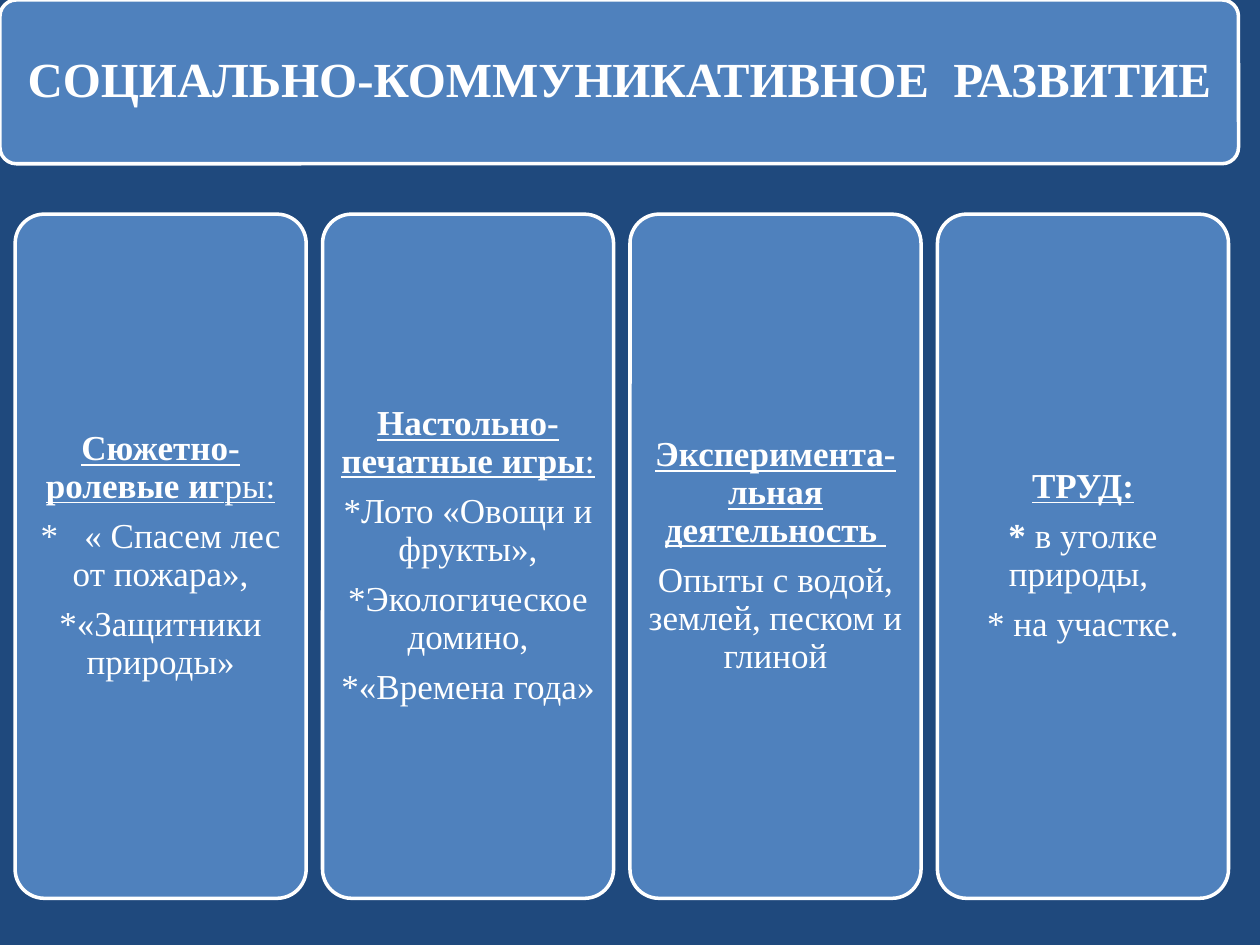
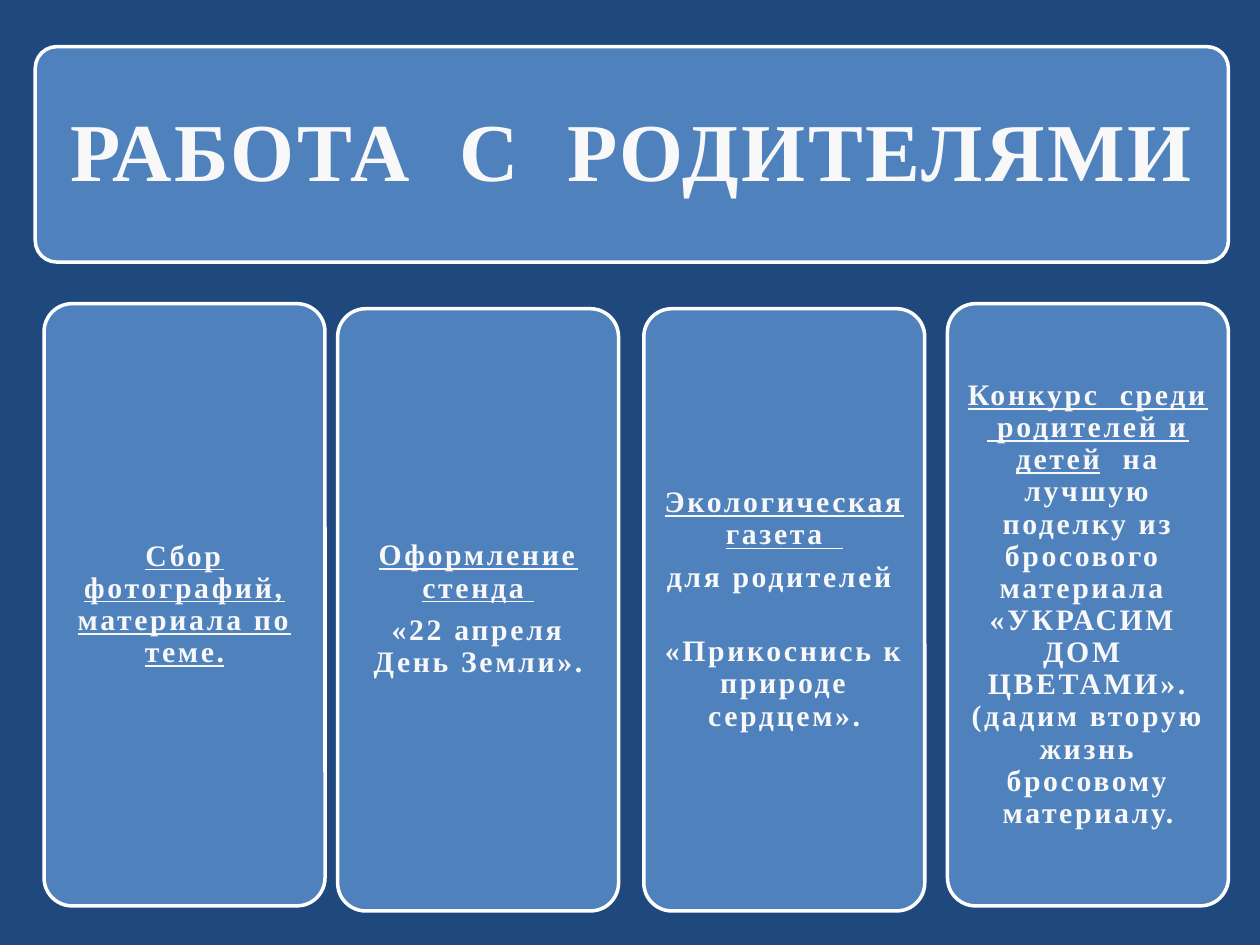
from pptx import Presentation
from pptx.dml.color import RGBColor
from pptx.enum.shapes import MSO_SHAPE
from pptx.enum.text import MSO_ANCHOR, MSO_AUTO_SIZE, PP_ALIGN
from pptx.util import Inches, Pt

NAVY = RGBColor(0x1F, 0x49, 0x7D)
BLUE = RGBColor(0x4F, 0x81, 0xBD)
WHITE = RGBColor(0xFF, 0xFF, 0xFF)
OFF_WHITE = RGBColor(0xF8, 0xF8, 0xF8)
FONT = "Times New Roman"
CORNER = 0.1
TITLE_ONLY = 5

# A card is a list of paragraphs, a paragraph a list of (text, style) runs;
# in a style, b is bold and u is underlined.
SLIDES = [
    dict(
        title="СОЦИАЛЬНО-КОММУНИКАТИВНОЕ  РАЗВИТИЕ",
        band=(0, 0, 9.83, 1.3), title_size=28, title_inset=0.12,
        lefts=[0.12 + 2.44 * col for col in range(4)], tops=[1.7] * 4,
        card=(2.31, 5.43), size=20, inset=0.08, color=WHITE, spacing=0,
        cards=[
            [[("Сюжетно-ролевые иг", "bu"), ("ры:", "u")],
             [("*   « Спасем лес от пожара»,", "")],
             [("*«Защитники природы»", "")]],
            [[("Настольно-печатные игры", "bu"), (":", "u")],
             [("*Лото «Овощи и фрукты»,", "")],
             [("*Экологическое домино,", "")],
             [("*«Времена года»", "")]],
            [[("Эксперимента-льная деятельность ", "bu")],
             [("Опыты с водой, землей, песком и глиной", "")]],
            [[("ТРУД:", "bu")],
             [("* ", "b"), ("в уголке природы, ", "")],
             [("* на участке.", "")]],
        ],
    ),
    dict(
        title="РАБОТА  С  РОДИТЕЛЯМИ",
        band=(0.28, 0.37, 9.47, 1.71), title_size=47, title_inset=0.2,
        lefts=[0.35, 2.68, 5.11, 7.52], tops=[2.41, 2.45, 2.45, 2.41],
        card=(2.23, 4.78), size=17, inset=0.07, color=OFF_WHITE, spacing=1.5,
        cards=[
            [[("Сбор фотографий, материала по теме.", "bu")]],
            [[("Оформление стенда ", "bu")],
             [("«22 апреля День Земли».", "b")]],
            [[("Экологическая газета  ", "bu")],
             [("для родителей ", "b")],
             [("«Прикоснись к природе сердцем».", "b")]],
            [[("Конкурс  среди  родителей и детей", "bu"),
              ("  на лучшую поделку из бросового  материала  «УКРАСИМ  ДОМ  "
               "ЦВЕТАМИ». (дадим вторую жизнь бросовому материалу.", "b")]],
        ],
        wide_gap=(2, 1, 24),  # card, paragraph, points after it
    ),
]


def add_panel(s, left, top, width, height):
    sp = s.shapes.add_shape(MSO_SHAPE.ROUNDED_RECTANGLE, Inches(left),
                            Inches(top), Inches(width), Inches(height))
    sp.adjustments[0] = CORNER
    sp.shadow.inherit = False
    sp.fill.solid()
    sp.fill.fore_color.rgb = BLUE
    sp.line.color.rgb = WHITE
    sp.line.width = Pt(2)
    return sp


def write(tf, paragraphs, size, inset, color, spacing):
    tf.word_wrap = True
    tf.auto_size = MSO_AUTO_SIZE.NONE
    tf.vertical_anchor = MSO_ANCHOR.MIDDLE
    tf.margin_left = tf.margin_right = Inches(inset)
    tf.margin_top = tf.margin_bottom = Inches(inset)
    for i, runs in enumerate(paragraphs):
        p = tf.add_paragraph() if i else tf.paragraphs[0]
        p.alignment = PP_ALIGN.CENTER
        p.line_spacing = 0.9
        p.space_before = Pt(0)
        p.space_after = Pt(round(size * 0.35))
        p.font.name = FONT
        p.font.size = Pt(size)
        p.font.color.rgb = color
        for text, style in runs:
            r = p.add_run()
            r.text = text
            r.font.bold = "b" in style
            r.font.underline = "u" in style
            if spacing:
                r._r.get_or_add_rPr().set("spc", str(int(spacing * 100)))


def add_title(s, d):
    left, top, width, height = d["band"]
    add_panel(s, *d["band"])
    title = s.shapes.title
    title.element.getparent().append(title.element)  # in front of the band
    edge = round(CORNER * height * 0.29, 2)  # keeps text clear of the corners
    title.left, title.top = Inches(left + edge), Inches(top + edge)
    title.width, title.height = Inches(width - 2 * edge), Inches(height - 2 * edge)
    write(title.text_frame, [[(d["title"], "b")]], d["title_size"],
          d["title_inset"], d["color"], d["spacing"])


def main():
    prs = Presentation()
    prs.slide_width, prs.slide_height = Inches(10), Inches(7.5)
    background = prs.slide_master.background.fill
    background.solid()
    background.fore_color.rgb = NAVY

    for d in SLIDES:
        s = prs.slides.add_slide(prs.slide_layouts[TITLE_ONLY])
        add_title(s, d)
        panels = []
        for left, top, paragraphs in zip(d["lefts"], d["tops"], d["cards"]):
            sp = add_panel(s, left, top, *d["card"])
            write(sp.text_frame, paragraphs, d["size"], d["inset"],
                  d["color"], d["spacing"])
            panels.append(sp)
        if "wide_gap" in d:
            card, paragraph, points = d["wide_gap"]
            panels[card].text_frame.paragraphs[paragraph].space_after = Pt(points)

    prs.save("out.pptx")


if __name__ == "__main__":
    main()
